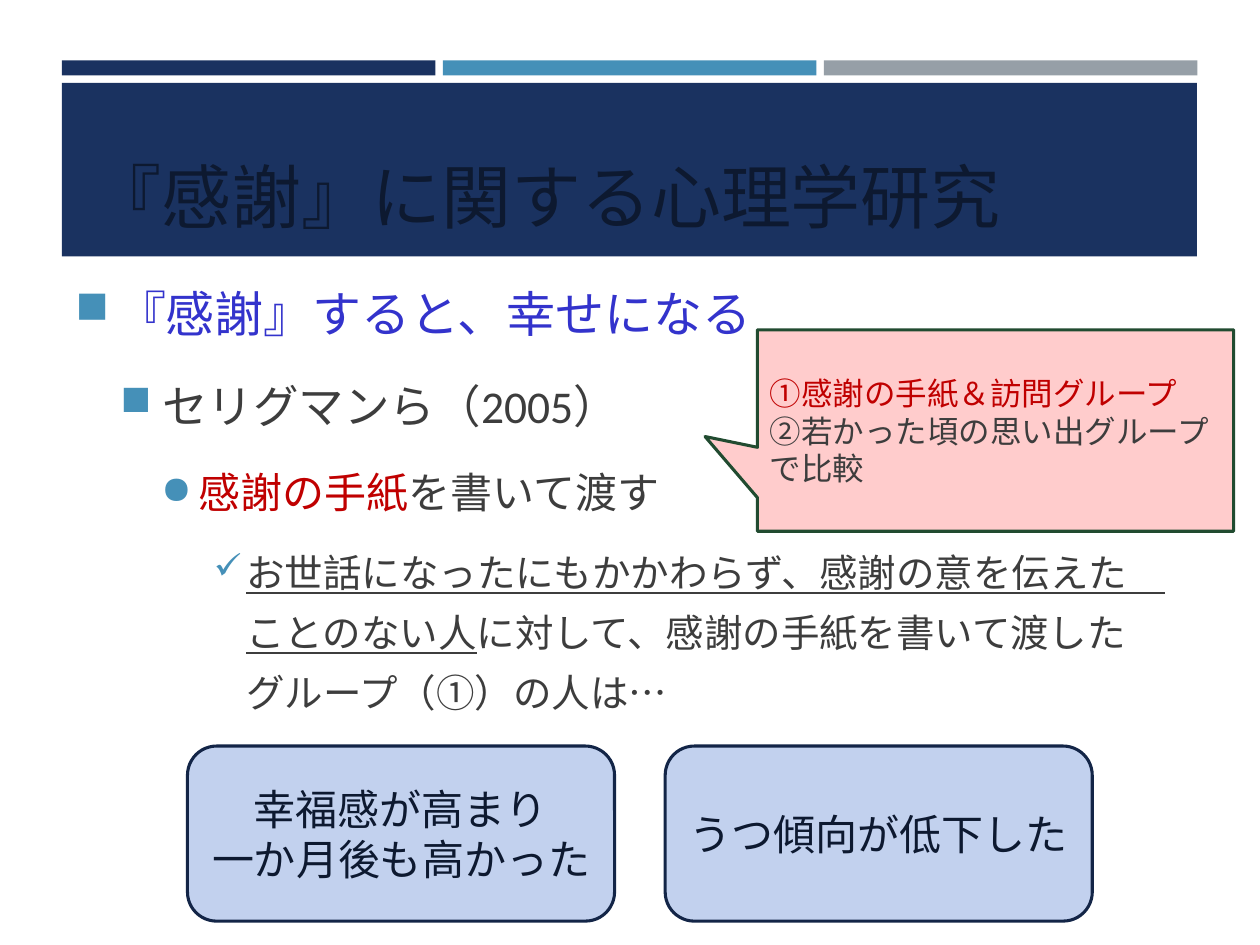
from lxml import etree
from pptx import Presentation
from pptx.dml.color import RGBColor
from pptx.enum.shapes import MSO_SHAPE
from pptx.enum.text import MSO_ANCHOR, PP_ALIGN
from pptx.oxml.ns import qn
from pptx.util import Cm, Pt

RECTANGLE = MSO_SHAPE.RECTANGLE
ROUNDED = MSO_SHAPE.ROUNDED_RECTANGLE
CALLOUT = MSO_SHAPE.RECTANGULAR_CALLOUT
MIDDLE = MSO_ANCHOR.MIDDLE
LEFT = PP_ALIGN.LEFT
CENTER = PP_ALIGN.CENTER

NAVY = RGBColor(0x1A, 0x32, 0x60)
DARK_NAVY = RGBColor(0x0D, 0x19, 0x30)
NAVY_EDGE = RGBColor(0x13, 0x25, 0x47)
TEAL = RGBColor(0x45, 0x90, 0xB8)
GRAY = RGBColor(0x96, 0x9F, 0xA7)
TEXT = RGBColor(0x3D, 0x3D, 0x3D)
BLUE = RGBColor(0x33, 0x33, 0xCC)
RED = RGBColor(0xC0, 0x00, 0x00)
PALE_BLUE = RGBColor(0xC2, 0xD1, 0xEE)
PINK = RGBColor(0xFF, 0xCC, 0xCC)
GREEN = RGBColor(0x21, 0x4B, 0x30)


def add_box(kind, left, top, width, height, fill, edge=None):
    box = slide.shapes.add_shape(kind, Cm(left), Cm(top), Cm(width), Cm(height))
    box.shadow.inherit = False
    box.fill.solid()
    box.fill.fore_color.rgb = fill
    if edge is None:
        box.line.fill.background()
    else:
        box.line.color.rgb = edge
        box.line.width = Pt(1.75)
    box.text_frame.word_wrap = True
    box.text_frame.vertical_anchor = MIDDLE
    return box


def add_span(para, text, size, color, underline=None):
    span = para.add_run()
    span.text = text
    span.font.name = "Calibri"
    span.font.size = Pt(size)
    span.font.color.rgb = color
    span.font.underline = underline


deck = Presentation()
deck.slide_width = Cm(25.4)
deck.slide_height = Cm(19.05)
slide = deck.slides.add_slide(deck.slide_layouts[6])

for column, color in enumerate([NAVY, TEAL, GRAY]):
    add_box(RECTANGLE, 1.25 + column * 7.68, 1.22, 7.53, 0.3, color)
add_box(RECTANGLE, 1.25, 1.67, 22.88, 3.5, NAVY)

title = slide.shapes.add_textbox(Cm(1.6), Cm(2.7), Cm(22), Cm(2.5))
title.text_frame.word_wrap = True
title.text_frame.vertical_anchor = MIDDLE
add_span(title.text_frame.paragraphs[0], "『感謝』に関する心理学研究", 40, DARK_NAVY)

OUTLINE = [
    (0.84, -0.84, "■", 28, [("『感謝』すると、幸せになる", BLUE, None)]),
    (1.75, -0.84, "■", 26, [("セリグマンら（2005）", TEXT, None)]),
    (2.49, -0.76, "●", 24, [("感謝の手紙", RED, None), ("を書いて渡す", TEXT, None)]),
    (3.45, -0.66, "✓", 22, [
        ("お世話になったにもかかわらず、感謝の意を伝えた　ことのない人", TEXT, True),
        ("に対して、感謝の手紙を書いて渡した　グループ（①）の人は…", TEXT, None),
    ]),
]
body = slide.shapes.add_textbox(Cm(1.27), Cm(5.23), Cm(22.86), Cm(9.55))
frame = body.text_frame
frame.word_wrap = True
for level, (margin, indent, bullet, size, spans) in enumerate(OUTLINE):
    para = frame.paragraphs[0] if level == 0 else frame.add_paragraph()
    para.level = level
    para.line_spacing = 1.3
    para.space_before = Pt(size * 0.2)
    para.space_after = Pt(6)
    for text, color, underline in spans:
        add_span(para, text, size, color, underline)
    properties = para._p.get_or_add_pPr()
    properties.set("marL", str(Cm(margin)))
    properties.set("indent", str(Cm(indent)))
    bullet_color = etree.SubElement(properties, qn("a:buClr"))
    etree.SubElement(bullet_color, qn("a:srgbClr")).set("val", str(TEAL))
    etree.SubElement(properties, qn("a:buSzPct")).set("val", "92000")
    etree.SubElement(properties, qn("a:buChar")).set("char", bullet)

happier = add_box(ROUNDED, 3.78, 15.04, 8.61, 3.53, PALE_BLUE, NAVY_EDGE)
calmer = add_box(ROUNDED, 13.41, 15.04, 8.61, 3.53, PALE_BLUE, NAVY_EDGE)
groups = add_box(CALLOUT, 15.27, 6.65, 9.6, 4.06, PINK, GREEN)
groups.adjustments[0] = -0.61
groups.adjustments[1] = 0.03

BOX_LINES = [
    (happier, CENTER, 24, [("幸福感が高まり", DARK_NAVY), ("一か月後も高かった", DARK_NAVY)]),
    (calmer, CENTER, 24, [("うつ傾向が低下した", DARK_NAVY)]),
    (groups, LEFT, 18, [
        ("①感謝の手紙＆訪問グループ", RED),
        ("②若かった頃の思い出グループ", TEXT),
        ("で比較", TEXT),
    ]),
]
for box, alignment, size, lines in BOX_LINES:
    for number, (text, color) in enumerate(lines):
        frame = box.text_frame
        para = frame.paragraphs[0] if number == 0 else frame.add_paragraph()
        para.alignment = alignment
        add_span(para, text, size, color)

deck.save("out.pptx")
